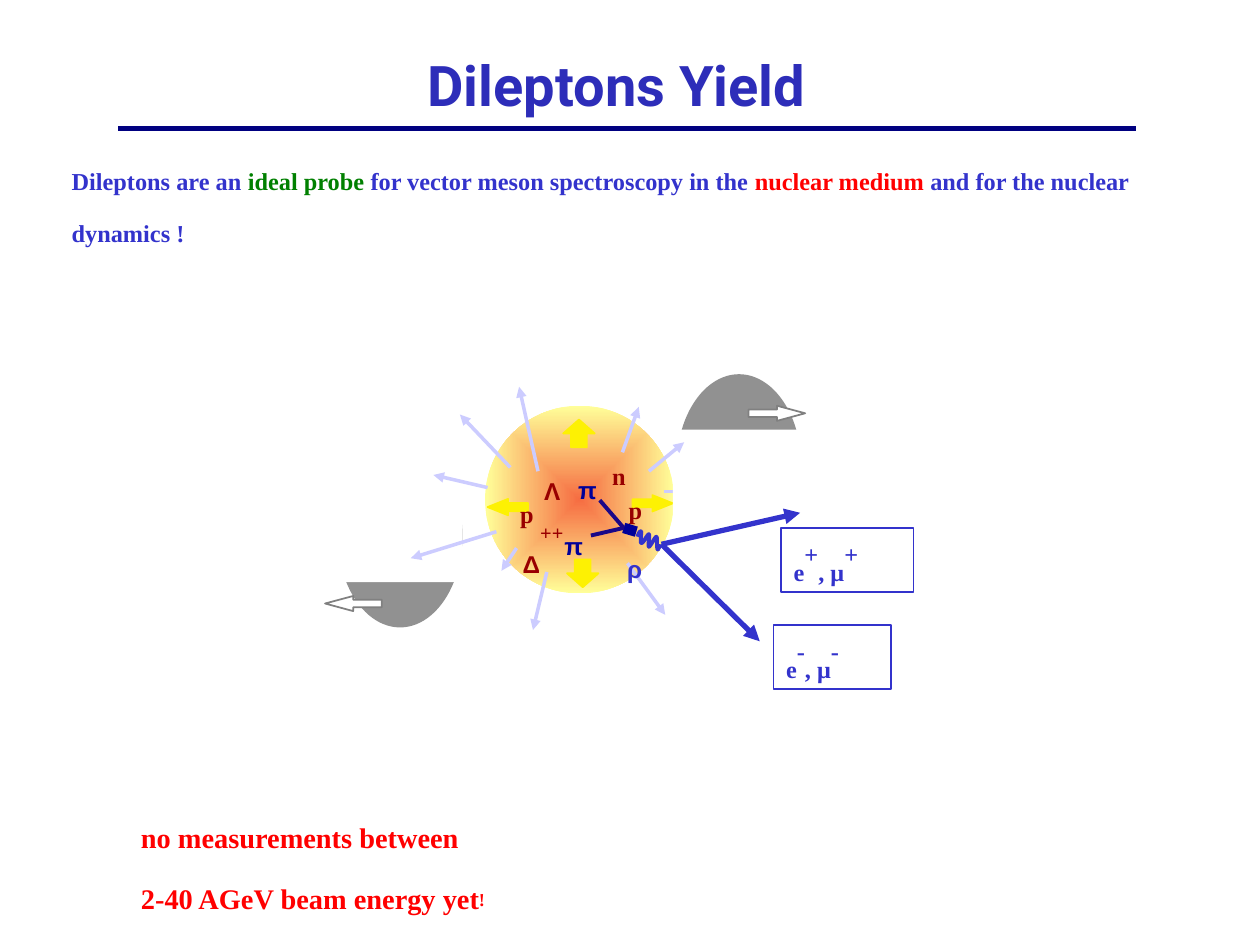
from lxml import etree
from pptx import Presentation
from pptx.dml.color import RGBColor
from pptx.enum.shapes import MSO_CONNECTOR, MSO_SHAPE
from pptx.enum.text import MSO_ANCHOR, PP_ALIGN
from pptx.oxml.ns import qn
from pptx.util import Inches, Pt

STRAIGHT = MSO_CONNECTOR.STRAIGHT
ELLIPSE, RECTANGLE = MSO_SHAPE.OVAL, MSO_SHAPE.RECTANGLE
LEFT, RIGHT = MSO_SHAPE.LEFT_ARROW, MSO_SHAPE.RIGHT_ARROW
UP, DOWN = MSO_SHAPE.UP_ARROW, MSO_SHAPE.DOWN_ARROW
MIDDLE, CENTER = MSO_ANCHOR.MIDDLE, PP_ALIGN.CENTER
SERIF, SANS, HEADING = "Times New Roman", "Arial", "Roboto"
BLUE, NAVY, INDIGO = "3333CC", "000099", "1C0888"
RED, GREEN, MAROON = "FF0000", "008000", "990000"
LILAC, YELLOW, GRAY, WHITE = "CCCCFF", "FDF103", "919191", "FFFFFF"


def color(value):
    """Turn a hex string into a colour."""
    return RGBColor.from_string(value)


def add_preset(slide, preset, box, fill=None, outline=None):
    """Add a preset shape with a flat fill and an optional thin outline."""
    shape = slide.shapes.add_shape(preset, *map(Inches, box))
    shape.shadow.inherit = False
    if fill:
        shape.fill.solid()
        shape.fill.fore_color.rgb = color(fill)
    else:
        shape.fill.background()
    if outline:
        shape.line.color.rgb = color(outline)
        shape.line.width = Pt(1)
    else:
        shape.line.fill.background()
    return shape


def add_block_arrow(slide, preset, box, head, fill, outline):
    """Add a block arrow whose head length is given as a share of its width."""
    arrow = add_preset(slide, preset, box, fill, outline)
    arrow.adjustments[0], arrow.adjustments[1] = 0.5, head


def add_line(slide, start, end, stroke, width, arrow=False):
    """Draw a straight line, with an arrowhead at its end if asked."""
    line = slide.shapes.add_connector(STRAIGHT, *map(Inches, (*start, *end)))
    line.line.color.rgb = color(stroke)
    line.line.width = Pt(width)
    if arrow:
        etree.SubElement(line.line._get_or_add_ln(), qn("a:tailEnd"), type="triangle")
    etree.SubElement(line._element.spPr, qn("a:effectLst"))


def write(paragraph, runs, font, size, fill):
    """Write (text, baseline percent, overrides) runs in one bold font."""
    paragraph.font.name, paragraph.font.bold = font, True
    paragraph.font.size, paragraph.font.color.rgb = Pt(size), color(fill)
    for text, baseline, changes in runs:
        run = paragraph.add_run()
        run.text = text
        if baseline:
            run._r.get_or_add_rPr().set("baseline", str(baseline * 1000))
        if "color" in changes:
            run.font.color.rgb = color(changes["color"])
        if "size" in changes:
            run.font.size = Pt(changes["size"])
        if "font" in changes:
            run.font.name = changes["font"]


def add_text(slide, box, paragraphs, font, size, fill, wrap=True):
    """Add a text box holding a list of paragraphs."""
    frame = slide.shapes.add_textbox(*map(Inches, box)).text_frame
    frame.word_wrap = wrap
    for index, runs in enumerate(paragraphs):
        paragraph = frame.add_paragraph() if index else frame.paragraphs[0]
        write(paragraph, runs, font, size, fill)
    return frame


def add_header(slide, left, top, width):
    """Place the title above its rule."""
    title = add_text(slide, (left + 0.08, top, width - 0.33, 0.83),
                     [[("Dileptons Yield", 0, {})]], HEADING, 32, "2D2DB9")
    title.vertical_anchor = MIDDLE
    title.paragraphs[0].alignment = CENTER
    add_line(slide, (left, top + 0.77), (left + width, top + 0.77), "000080", 2.83)


def add_statement(slide, box):
    """Place the opening sentence with its coloured key terms."""
    parts = [("Dileptons are an ", BLUE), ("ideal probe ", GREEN),
             ("for vector meson spectroscopy in the ", BLUE),
             ("nuclear medium ", RED), ("and for the nuclear dynamics !", BLUE)]
    runs = [(text, -12, {"color": fill}) for text, fill in parts]
    add_text(slide, box, [runs], SERIF, 24, BLUE)


def add_spectator(slide, left, top, mask, direction, arrow_offset):
    """Place a half-hidden nucleus remnant and its direction of flight."""
    add_preset(slide, ELLIPSE, (left, top, 0.99, 1.46), GRAY)
    dx, dy, width, height = mask
    add_preset(slide, RECTANGLE, (left + dx, top + dy, width, height), WHITE)
    dx, dy = arrow_offset
    add_block_arrow(slide, direction, (left + dx, top + dy, 0.45, 0.12), 1.86, WHITE, "808080")


def add_fireball(slide, left, top, width, height):
    """Place the glowing collision zone and its expansion arrows."""
    ball = add_preset(slide, ELLIPSE, (left, top, width, height), YELLOW)
    ball.fill.gradient()
    for stop, value in zip(ball.fill.gradient_stops, ("F66D42", "FFFF99")):
        stop.color.rgb = color(value)
    gradient = ball._element.spPr.find(qn("a:gradFill"))
    gradient.remove(gradient.find(qn("a:lin")))
    shade = etree.SubElement(gradient, qn("a:path"), path="shape")
    etree.SubElement(shade, qn("a:fillToRect"), l="50000", t="50000", r="50000", b="50000")
    for preset, dx, dy, w, h, head in ((LEFT, 0.02, 0.74, 0.32, 0.13, 1.25),
                                       (RIGHT, 1.17, 0.71, 0.32, 0.13, 1.25),
                                       (UP, 0.62, 0.11, 0.25, 0.22, 0.5),
                                       (DOWN, 0.65, 1.22, 0.25, 0.22, 0.5)):
        add_block_arrow(slide, preset, (left + dx, top + dy, w, h), head, YELLOW, YELLOW)


def add_emission(slide, left, top, tracks):
    """Draw the particles leaving the fireball."""
    for x1, y1, x2, y2 in tracks:
        add_line(slide, (left + x1, top + y1), (left + x2, top + y2), LILAC, 2, True)


def add_particles(slide, left, top):
    """Label the hadrons inside the fireball."""
    labels = [("p", 0.18, 0.51, 0.36, SERIF, MAROON), ("n", 0.91, 0.21, 0.36, SERIF, MAROON),
              ("Δ", 0.2, 0.86, 0.61, SANS, MAROON), ("Λ", 0.37, 0.33, 0.43, SANS, MAROON),
              ("p", 1.04, 0.48, 0.36, SERIF, MAROON), ("π", 0.53, 0.77, 0.38, SANS, NAVY),
              ("π", 0.64, 0.32, 0.38, SANS, NAVY)]
    for symbol, dx, dy, width, font, fill in labels:
        runs = [(symbol, -12, {})]
        if symbol == "Δ":
            runs.append(("++", 80, {"size": 20, "font": SERIF}))
        add_text(slide, (left + dx, top + dy, width, 0.5), [runs], font, 24, fill, False)


def add_wave(slide, left, top):
    """Draw the wavy rho propagator as smooth sampled curves."""
    knots = [(0.01, 0.05), (0.02, 0.02), (0.03, 0), (0.04, 0.01), (0.04, 0.02), (0.03, 0.1),
             (0.04, 0.1), (0.05, 0.11), (0.09, 0.03), (0.1, 0.03), (0.11, 0.04), (0.09, 0.12),
             (0.1, 0.13), (0.11, 0.13), (0.15, 0.05), (0.16, 0.05), (0.17, 0.06), (0.16, 0.14),
             (0.17, 0.15), (0.17, 0.16), (0.19, 0.12), (0.19, 0.11)]
    points = []
    for start in range(0, len(knots) - 1, 3):
        for t in (step / 8 for step in range(9)):
            weights = ((1 - t) ** 3, 3 * t * (1 - t) ** 2, 3 * t * t * (1 - t), t ** 3)
            curve = list(zip(weights, knots[start:start + 4]))
            points.append((Inches(left + sum(w * x for w, (x, _) in curve)),
                           Inches(top + sum(w * y for w, (_, y) in curve))))
    builder = slide.shapes.build_freeform(*points[0])
    builder.add_line_segments(points[1:], close=False)
    wave = builder.convert_to_shape()
    wave.shadow.inherit = False
    wave.fill.background()
    wave.line.color.rgb = color(BLUE)
    wave.line.width = Pt(2.25)


def add_decay(slide, left, top):
    """Draw pion annihilation through a rho into a lepton pair."""
    for sign, dx, dy, width in (("+", 1.51, 0.22, 1.05), ("-", 1.45, 0.99, 0.93)):
        label = add_preset(slide, RECTANGLE, (left + dx, top + dy, width, 0.51), outline=BLUE)
        frame = label.text_frame
        frame.word_wrap, frame.vertical_anchor = False, MSO_ANCHOR.TOP
        frame.paragraphs[0].alignment = PP_ALIGN.LEFT
        runs = [("e", -12, {}), (sign, 30, {}), (", μ", -12, {}), (sign, 30, {})]
        write(frame.paragraphs[0], runs, SERIF, 24, BLUE)
    vertex, pair = (left + 0.26, top + 0.22), (left + 0.56, top + 0.35)
    for dx, dy in ((1.66, 0.1), (1.34, 1.12)):
        add_line(slide, pair, (left + dx, top + dy), BLUE, 3, True)
    add_wave(slide, left + 0.36, top + 0.24)
    add_line(slide, vertex, (left + 0.36, top + 0.25), NAVY, 6)
    for dx, dy in ((0.07, 0), (0, 0.28)):
        add_line(slide, (left + dx, top + dy), vertex, INDIGO, 2.25)
    add_text(slide, (left + 0.19, top + 0.2, 0.2, 0.5), [[("ρ", -12, {})]], SANS, 24, BLUE)


def add_collision(slide, left, top):
    """Assemble the heavy-ion collision from back to front."""
    tracks = [(0.2, 0.49, -0.2, 0.07), (1.09, 0.37, 1.22, 0.01), (0.49, 1.32, 0.38, 1.78),
              (0.02, 0.65, -0.41, 0.55), (1.13, 1.25, 1.43, 1.66), (1.42, 0.68, 1.59, 0.68),
              (0.25, 1.13, 0.13, 1.31), (0.42, 0.52, 0.27, -0.15), (0.09, 1, -0.59, 1.21)]
    add_spectator(slide, left - 1.17, top + 0.3, (-0.03, -0.07, 1.02, 1.17), LEFT, (-0.1, 1.21))
    add_fireball(slide, left, top, 1.5, 1.49)
    add_emission(slide, left, top, tracks)
    add_spectator(slide, left + 1.52, top - 0.25, (-0.03, 0.44, 1.09, 1.2), RIGHT, (0.57, 0.25))
    add_emission(slide, left, top, [(1.3, 0.52, 1.58, 0.29)])
    add_particles(slide, left, top)
    add_decay(slide, left + 0.84, top + 0.75)


def add_remark(slide, box):
    """Place the closing remark."""
    lines = [[("no measurements between", -12, {})],
             [("2-40 AGeV beam energy yet", -12, {}), ("!", -12, {"size": 18})]]
    add_text(slide, box, lines, SERIF, 28, RED)


def main():
    """Build and save the slide."""
    deck = Presentation()
    deck.slide_width, deck.slide_height = Inches(10), Inches(7.5)
    slide = deck.slides.add_slide(deck.slide_layouts[6])
    add_header(slide, 0.94, 0.25, 8.08)
    add_statement(slide, (0.47, 1.09, 9.08, 0.91))
    add_collision(slide, 3.85, 3.22)
    add_remark(slide, (1.02, 6.25, 3.58, 0.73))
    deck.save("out.pptx")


if __name__ == "__main__":
    main()
